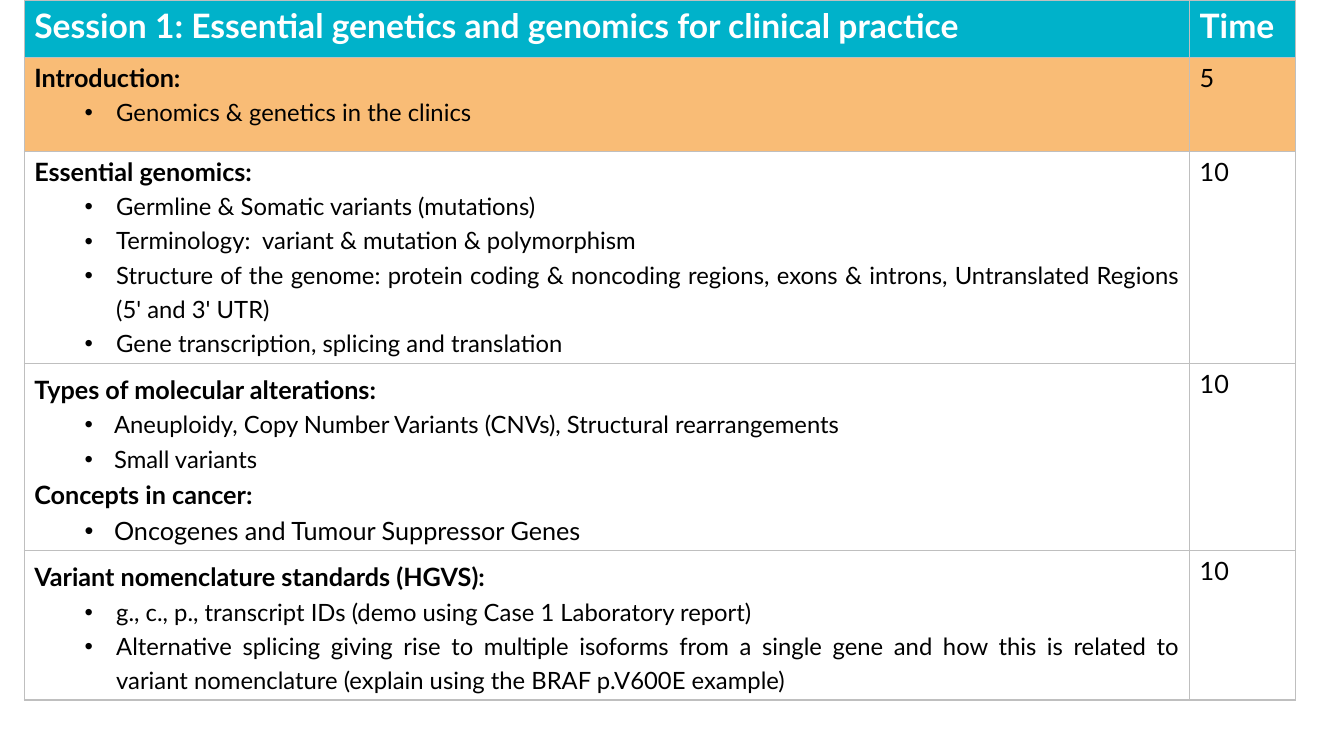
from dataclasses import dataclass

from lxml import etree
from pptx import Presentation
from pptx.dml.color import RGBColor
from pptx.enum import text
from pptx.oxml import ns
from pptx.util import Pt


@dataclass(frozen=True)
class Theme:
    font: str = "Lato"
    header_fill: str = "00B2CA"
    current_fill: str = "F9BC76"
    border: str = "BFBFBF"
    light: str = "FFFFFF"
    dark: str = "000000"
    header_size: float = 24
    body_size: float = 18
    bullet_size: float = 17


THEME = Theme()
AGENDA_BOX = (17.3, 0, 908.3, 499.5)
TIME_WIDTH = 75.8
ROW_HEIGHTS = (41, 67, 151.5, 133.5, 106.5)

HEADER = ("Session 1: Essential genetics and genomics for clinical practice", "Time")


def heading(words, **style):
    return words, dict(bold=True, align=text.PP_ALIGN.JUSTIFY, **style)


def bullet(words, left=58.5, hang=22.5, size=THEME.bullet_size):
    return words, dict(size=size, left=left, hang=hang, spacing=1.2,
                       align=text.PP_ALIGN.JUSTIFY)


def tight_bullet(words, **style):
    return bullet(words, left=57, hang=21, **style)


SESSIONS = [
    ("5", THEME.current_fill, [
        heading("Introduction:"),
        bullet("Genomics & genetics in the clinics"),
    ]),
    ("10", None, [
        heading("Essential genomics:"),
        bullet("Germline & Somatic variants (mutations)"),
        bullet("Terminology:  variant & mutation & polymorphism"),
        bullet("Structure of the genome: protein coding & noncoding regions, "
               "exons & introns, Untranslated Regions (5' and 3' UTR)"),
        bullet("Gene transcription, splicing and translation"),
    ]),
    ("10", None, [
        heading("Types of molecular alterations:", spacing=1.2),
        tight_bullet("Aneuploidy, Copy Number Variants (CNVs), Structural rearrangements"),
        tight_bullet("Small variants"),
        heading("Concepts in cancer:", spacing=1.2),
        tight_bullet("Oncogenes and Tumour Suppressor Genes", size=THEME.body_size),
    ]),
    ("10", None, [
        heading("Variant nomenclature standards (HGVS):", spacing=1.2),
        bullet("g., c., p., transcript IDs (demo using Case 1 Laboratory report)"),
        bullet("Alternative splicing giving rise to multiple isoforms from a single "
               "gene and how this is related to variant nomenclature "
               "(explain using the BRAF p.V600E example)"),
    ]),
]


def write(paragraph, words, size=THEME.body_size, color=THEME.dark, bold=False,
          align=text.PP_ALIGN.LEFT, spacing=None, left=0, hang=0):
    """Fill one paragraph; a hanging indent also gives it a bullet."""
    paragraph.alignment = align
    if spacing:
        paragraph.line_spacing = spacing
    if hang:
        properties = paragraph._p.get_or_add_pPr()
        properties.set("marL", str(Pt(left)))
        properties.set("indent", str(-Pt(hang)))
        etree.SubElement(properties, ns.qn("a:buFont")).set("typeface", "Arial")
        etree.SubElement(properties, ns.qn("a:buChar")).set("char", "•")
    run = paragraph.add_run()
    run.text = words
    run.font.name = THEME.font
    run.font.size = Pt(size)
    run.font.bold = bold
    run.font.color.rgb = RGBColor.from_string(color)


def fill_cell(cell, paragraphs, fill=None):
    properties = cell._tc.get_or_add_tcPr()
    for side in ("lnL", "lnR", "lnT", "lnB"):
        line = etree.SubElement(properties, ns.qn(f"a:{side}"), w=str(Pt(1)))
        solid = etree.SubElement(line, ns.qn("a:solidFill"))
        etree.SubElement(solid, ns.qn("a:srgbClr"), val=THEME.border)
    if fill:
        cell.fill.solid()
        cell.fill.fore_color.rgb = RGBColor.from_string(fill)
    else:
        cell.fill.background()
    frame = cell.text_frame
    for index, (words, style) in enumerate(paragraphs):
        paragraph = frame.add_paragraph() if index else frame.paragraphs[0]
        write(paragraph, words, **style)


def add_agenda(slide, box):
    left, top, width, height = box
    agenda = slide.shapes.add_table(len(SESSIONS) + 1, 2, Pt(left), Pt(top),
                                    Pt(width), Pt(height)).table
    agenda.first_row = agenda.horz_banding = False
    agenda.columns[0].width = Pt(width - TIME_WIDTH)
    agenda.columns[1].width = Pt(TIME_WIDTH)
    for row, row_height in zip(agenda.rows, ROW_HEIGHTS):
        row.height = Pt(row_height)

    header_style = dict(size=THEME.header_size, color=THEME.light, bold=True)
    for column, words in enumerate(HEADER):
        fill_cell(agenda.cell(0, column), [(words, header_style)], THEME.header_fill)
    for row, (minutes, fill, topics) in enumerate(SESSIONS, start=1):
        fill_cell(agenda.cell(row, 0), topics, fill)
        fill_cell(agenda.cell(row, 1), [(minutes, {})], fill)


def main():
    deck = Presentation()
    deck.slide_width, deck.slide_height = Pt(960), Pt(540)
    slide = deck.slides.add_slide(deck.slide_layouts[6])
    add_agenda(slide, AGENDA_BOX)
    deck.save("out.pptx")


if __name__ == "__main__":
    main()
